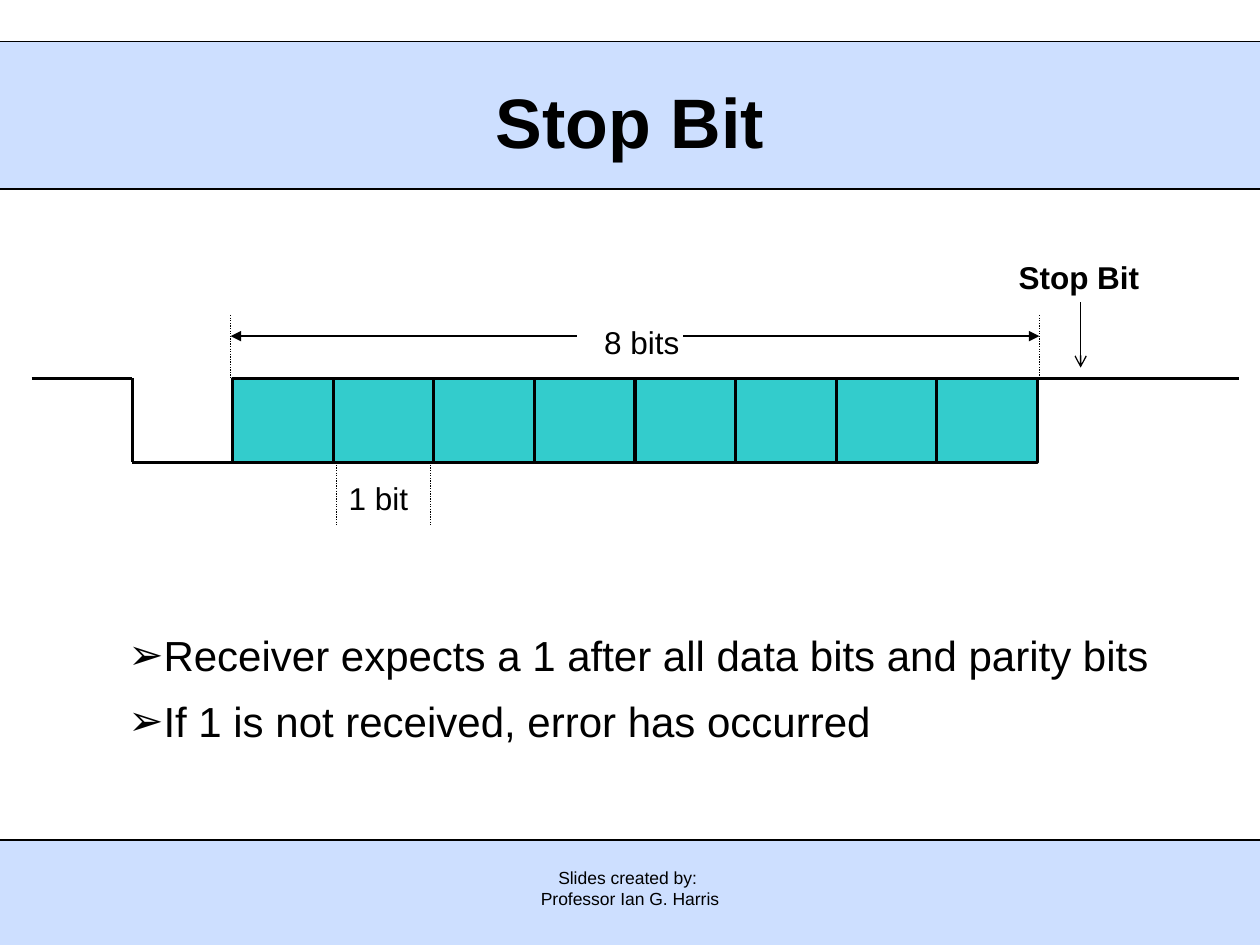
from collections import namedtuple

from lxml import etree
from pptx import Presentation, util as u
from pptx.dml.color import RGBColor
from pptx.enum import dml, shapes, text
from pptx.oxml.ns import qn

COLORS = {"band": "CDDFFF", "bit": "33CCCC", "ink": "000000"}
FONT = "Arial"
WIDTH, HEIGHT = 10, 7.5
THIN, THICK = 0.75, 1.75
DATA_BITS = 8

Box = namedtuple("Box", "left top width height")


def color(name):
    return RGBColor.from_string(COLORS[name])


def inches(*values):
    return [u.Inches(value) for value in values]


def add_rect(slide, box, fill, line, weight):
    shape = slide.shapes.add_shape(shapes.MSO_SHAPE.RECTANGLE, *inches(*box))
    shape.shadow.inherit = False
    shape.fill.solid()
    shape.fill.fore_color.rgb = color(fill)
    shape.line.color.rgb = color(line)
    shape.line.width = u.Pt(weight)


def add_line(slide, start, end, weight=THIN, dotted=False, arrow=None):
    connector = slide.shapes.add_connector(
        shapes.MSO_CONNECTOR.STRAIGHT, *inches(*start, *end))
    connector.line.color.rgb = color("ink")
    connector.line.width = u.Pt(weight)
    if dotted:
        connector.line.dash_style = dml.MSO_LINE.ROUND_DOT
    properties = connector.element.spPr
    if arrow:
        etree.SubElement(properties.find(qn("a:ln")), qn("a:tailEnd"), type=arrow)
    etree.SubElement(properties, qn("a:effectLst"))


def write(frame, lines, size, bold=False, align=text.PP_ALIGN.LEFT):
    frame.text = "\n".join(lines)
    for paragraph in frame.paragraphs:
        paragraph.alignment = align
        for run in paragraph.runs:
            run.font.name = FONT
            run.font.size = u.Pt(size)
            run.font.bold = bold
            run.font.color.rgb = color("ink")


def add_text(slide, box, lines, size, wrap=True, **style):
    frame = slide.shapes.add_textbox(*inches(*box)).text_frame
    frame.word_wrap = wrap
    write(frame, lines, size, **style)
    return frame


def add_band(slide, box, edges):
    """Full-width band with ruled edges, given as shares of its height."""
    add_rect(slide, box, "band", "band", THIN)
    for edge in edges:
        y = box.top + edge * box.height
        add_line(slide, (box.left, y), (box.left + box.width, y))


def add_title(slide, box):
    title = slide.shapes.title
    title.left, title.top, title.width, title.height = inches(*box)
    frame = title.text_frame
    frame.auto_size = text.MSO_AUTO_SIZE.NONE
    frame.vertical_anchor = text.MSO_ANCHOR.MIDDLE
    write(frame, ["Stop Bit"], 40, bold=True, align=text.PP_ALIGN.CENTER)
    # Bring the title in front of its band
    title.element.getparent().append(title.element)


def add_bullets(slide, box, lines):
    frame = add_text(slide, box, lines, 24)
    for paragraph in frame.paragraphs:
        paragraph.line_spacing = 1.3
        properties = paragraph._p.get_or_add_pPr()
        properties.set("marL", "0")
        properties.set("indent", "0")
        etree.SubElement(properties, qn("a:buFont"), typeface=FONT)
        etree.SubElement(properties, qn("a:buChar"), char="➢")


def add_signal(slide, box):
    """Serial frame on a grid: one column per bit time, 13 rows."""
    column, row = box.width / 12, box.height / 13
    first, last = 2, 2 + DATA_BITS
    high, low, arrows = 6, 10, 4

    def at(x, y):
        return box.left + x * column, box.top + y * row

    def label(x, y, width, words, bold=False):
        add_text(slide, (*at(x, y), width * column, 2.4 * row), [words], 18,
                 wrap=False, bold=bold)

    # Data bits
    for index in range(first, last):
        add_rect(slide, (*at(index, high), column, (low - high) * row),
                 "bit", "ink", THICK)

    # Idle level, start bit and stop level
    idle = [(0, high), (1, high), (1, low), (first, low)]
    stop = [(last, high), (12, high)]
    for level in (idle, stop):
        for start, end in zip(level, level[1:]):
            add_line(slide, at(*start), at(*end), THICK)

    # Dotted guides for one bit and for all eight
    for x, y in [(3.03, low), (3.97, low), (1.98, 3), (10.02, 3)]:
        add_line(slide, at(x, y), at(x, y + 3), dotted=True)

    # Dimension arrows and stop bit pointer
    for start, end in [(5.42, 1.98), (6.48, 10.02)]:
        add_line(slide, at(start, arrows), at(end, arrows), arrow="triangle")
    add_line(slide, at(10.43, 2.4), at(10.43, 5.5), arrow="arrow")

    # Labels
    label(3.03, 10.5, 0.84, "1 bit")
    label(5.57, 3.1, 1, "8 bits")
    label(9.69, 0, 1.47, "Stop Bit", bold=True)


def main():
    presentation = Presentation()
    presentation.slide_width, presentation.slide_height = inches(WIDTH, HEIGHT)
    slide = presentation.slides.add_slide(presentation.slide_layouts[5])

    # Footer and title bands
    add_band(slide, Box(0, HEIGHT * 8 / 9, WIDTH, HEIGHT / 9), edges=[0])
    add_band(slide, Box(0, 0.33, WIDTH, 1.17), edges=[0, 1])
    add_text(slide, Box(3.42, 6.83, 3.16, 0.49),
             ["Slides created by: ", "Professor Ian G. Harris"], 10,
             align=text.PP_ALIGN.CENTER)
    add_title(slide, Box(0.75, 0.33, 8.5, 1.25))

    # Body
    add_bullets(slide, Box(0.92, 4.83, 8.33, 1.15), [
        "Receiver expects a 1 after all data bits and parity bits",
        "If 1 is not received, error has occurred",
    ])
    add_signal(slide, Box(0.25, 2, 9.58, 2.17))
    presentation.save("out.pptx")


if __name__ == "__main__":
    main()
